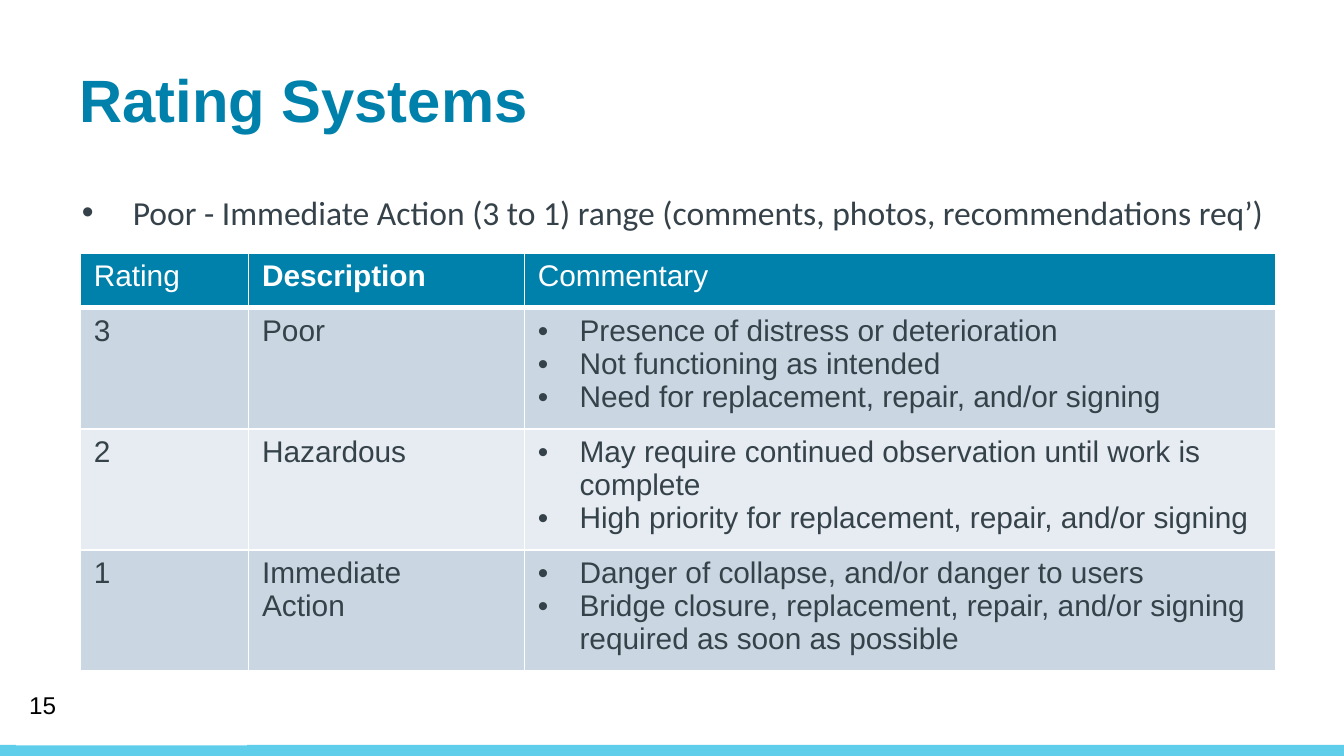
import pptx
import pptx.dml.color
import pptx.enum.shapes
import pptx.enum.text
import pptx.oxml
import pptx.oxml.ns
import pptx.util
from pptx.util import Cm

BLUE, SKY, INK, WHITE = "0081AB", "5FCEEA", "36424A", "FFFFFF"
BANDS = ["CAD7E2", "E6ECF1"]
HEADERS = ["Rating", "Description", "Commentary"]
RATINGS = [
    ("3", ["Poor"], ["Presence of distress or deterioration",
                     "Not functioning as intended",
                     "Need for replacement, repair, and/or signing"]),
    ("2", ["Hazardous"], ["May require continued observation until work is complete",
                          "High priority for replacement, repair, and/or signing"]),
    ("1", ["Immediate", "Action"], ["Danger of collapse, and/or danger to users",
                                    "Bridge closure, replacement, repair, and/or signing "
                                    "required as soon as possible"]),
]


def color(value):
    return pptx.dml.color.RGBColor.from_string(value)


def element(xml):
    head, tail = xml.split(" ", 1)
    return pptx.oxml.parse_xml(f"{head} {pptx.oxml.ns.nsdecls('a')} {tail}")


class SlideBuilder:
    """Holds the text style and the current slide, and adds each kind of element."""

    def __init__(self, slide, font="Arial", ink=INK):
        self.slide = slide
        self.font = font
        self.ink = ink

    def fill_text(self, frame, lines, size, ink=None, bold=False, font=None, indent=None):
        frame.word_wrap = True
        for index, line in enumerate(lines):
            paragraph = frame.paragraphs[0] if index == 0 else frame.add_paragraph()
            paragraph.text = line
            if indent:
                self.bullet(paragraph, Cm(indent))
            paragraph.font.name = font or self.font
            paragraph.font.size = pptx.util.Pt(size)
            paragraph.font.bold = bold
            paragraph.font.color.rgb = color(ink or self.ink)

    def bullet(self, paragraph, indent):
        properties = paragraph._p.get_or_add_pPr()
        properties.set("marL", str(indent))
        properties.set("indent", str(-indent))
        properties.append(element(f'<a:buClr ><a:srgbClr val="{self.ink}"/></a:buClr>'))
        properties.append(element('<a:buFont typeface="Arial"/>'))
        properties.append(element('<a:buChar char="•"/>'))

    def title(self, text, left, top, width, height):
        shape = self.slide.shapes.title
        shape.left, shape.top, shape.width, shape.height = map(Cm, (left, top, width, height))
        frame = shape.text_frame
        frame.auto_size = pptx.enum.text.MSO_AUTO_SIZE.NONE
        frame.vertical_anchor = pptx.enum.text.MSO_ANCHOR.TOP
        frame.margin_left, frame.margin_top = 0, Cm(0.25)
        self.fill_text(frame, [text], 32, BLUE, bold=True)
        frame.paragraphs[0].alignment = pptx.enum.text.PP_ALIGN.LEFT

    def text(self, text, left, top, width, height, size, middle=False, **style):
        box = self.slide.shapes.add_textbox(*map(Cm, (left, top, width, height)))
        if middle:
            box.text_frame.vertical_anchor = pptx.enum.text.MSO_ANCHOR.MIDDLE
        self.fill_text(box.text_frame, [text], size, **style)

    def bar(self, fill, left, top, width, height):
        shape = self.slide.shapes.add_shape(
            pptx.enum.shapes.MSO_SHAPE.RECTANGLE, *map(Cm, (left, top, width, height)))
        shape.shadow.inherit = False
        shape.fill.solid()
        shape.fill.fore_color.rgb = color(fill)
        shape.line.fill.background()

    def cell(self, cell, lines, fill, top=1, bottom=1, **style):
        properties = cell._tc.get_or_add_tcPr()
        for side, points in zip("LRTB", (1, 1, top, bottom)):
            properties.append(element(
                f'<a:ln{side} w="{pptx.util.Pt(points)}"><a:solidFill>'
                f'<a:srgbClr val="{WHITE}"/></a:solidFill></a:ln{side}>'))
        cell.fill.solid()
        cell.fill.fore_color.rgb = color(fill)
        self.fill_text(cell.text_frame, lines, 16, **style)

    def table(self, left, top, widths, heights):
        table = self.slide.shapes.add_table(
            len(heights), len(widths),
            *map(Cm, (left, top, sum(widths), sum(heights)))).table
        for column, width in zip(table.columns, widths):
            column.width = Cm(width)
        for row, height in zip(table.rows, heights):
            row.height = Cm(height)
        for index, header in enumerate(HEADERS):
            self.cell(table.cell(0, index), [header], BLUE, bottom=3,
                      ink=WHITE, bold=header == "Description")
        for row, (rating, description, comments) in enumerate(RATINGS, 1):
            fill, edge = BANDS[(row - 1) % 2], 3 if row == 1 else 1
            self.cell(table.cell(row, 0), [rating], fill, edge)
            self.cell(table.cell(row, 1), description, fill, edge)
            self.cell(table.cell(row, 2), comments, fill, edge, indent=0.79)


def main():
    presentation = pptx.Presentation()
    presentation.slide_width, presentation.slide_height = Cm(25.4), Cm(14.29)
    builder = SlideBuilder(presentation.slides.add_slide(presentation.slide_layouts[5]))
    builder.bar(SKY, 0, 14.08, 25.4, 0.21)
    builder.bar(WHITE, 0.3, 13.76, 4.37, 0.33)
    builder.text("15", 0.3, 12.95, 5.72, 0.76, 13, middle=True, ink="000000")
    builder.text("Poor - Immediate Action (3 to 1) range (comments, photos, recommendations req’)",
                 1.3, 3.5, 23.04, 2.29, 18, font="Calibri", indent=0.96)
    builder.title("Rating Systems", 1.5, 0.94, 22.83, 1.45)
    builder.table(1.52, 4.78, [3.18, 5.21, 14.2], [1.04] + [2.13] * len(RATINGS))
    presentation.save("out.pptx")


if __name__ == "__main__":
    main()
